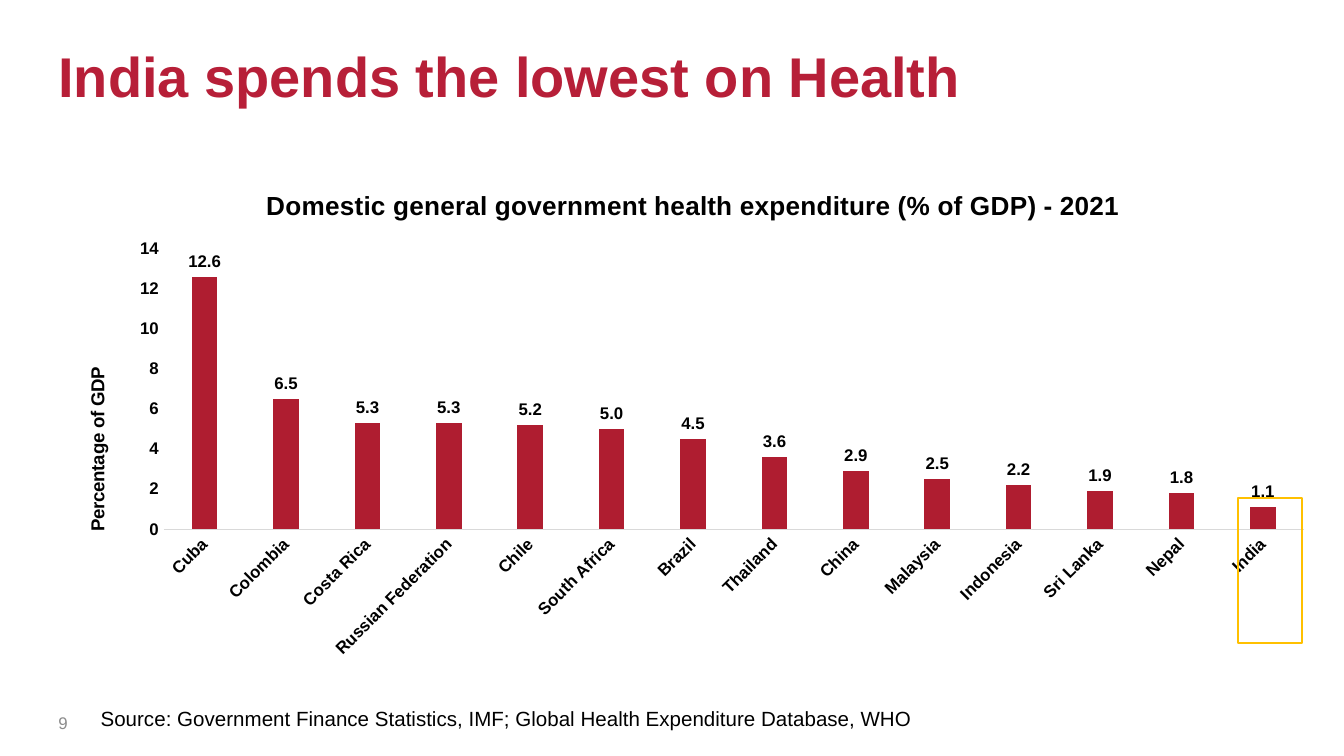
from dataclasses import dataclass

from pptx import Presentation
from pptx import util as u
from pptx.chart.data import CategoryChartData
from pptx.dml.color import RGBColor
from pptx.enum import chart as charts, shapes, text
from pptx.oxml import parse_xml
from pptx.oxml.ns import nsdecls, qn

PX = 4572  # 200 px to the inch


@dataclass(frozen=True)
class Theme:
    font: str = "Arial"
    heading: str = "B71F38"
    bar: str = "AF1D30"
    ink: str = "000000"
    muted: str = "8C8C8C"
    baseline: str = "D9D9D9"
    highlight: str = "FFC000"
    heading_size: int = 30
    chart_title_size: int = 14
    source_size: int = 11
    axis_title_size: int = 10
    label_size: int = 9


THEME = Theme()

SPENDING = {
    "Cuba": 12.6, "Colombia": 6.5, "Costa Rica": 5.3, "Russian Federation": 5.3,
    "Chile": 5.2, "South Africa": 5.0, "Brazil": 4.5, "Thailand": 3.6,
    "China": 2.9, "Malaysia": 2.5, "Indonesia": 2.2, "Sri Lanka": 1.9,
    "Nepal": 1.8, "India": 1.1,
}


def emu(box):
    return [u.Emu(length * PX) for length in box]


def style(font, size, color=THEME.ink, bold=False):
    font.name = THEME.font
    font.size = u.Pt(size)
    font.bold = bold
    font.color.rgb = RGBColor.from_string(color)


def add_line_of_text(slide, box, words, size, color, bold=False, side_inset=0):
    frame = slide.shapes.add_textbox(*emu(box)).text_frame
    frame.word_wrap = True
    frame.margin_left = frame.margin_right = u.Emu(side_inset * PX)
    frame.vertical_anchor = text.MSO_ANCHOR.MIDDLE
    run = frame.paragraphs[0].add_run()
    run.text = words
    style(run.font, size, color, bold)
    return frame


def add_heading(slide, box):
    frame = add_line_of_text(slide, box, "India spends the lowest on Health",
                             THEME.heading_size, THEME.heading, bold=True)
    frame.paragraphs[0].line_spacing = 0.9


def add_footer(slide, box):
    left, top, width, height = box
    add_line_of_text(slide, (left, top + 3, 86, height), "9",
                     THEME.label_size, THEME.muted)
    source = add_line_of_text(
        slide, (left + 43, top, width - 43, height - 4),
        "Source: Government Finance Statistics, IMF; "
        "Global Health Expenditure Database, WHO",
        THEME.source_size, THEME.ink, side_inset=20)
    source.vertical_anchor = text.MSO_ANCHOR.TOP
    source.auto_size = text.MSO_AUTO_SIZE.SHAPE_TO_FIT_TEXT


def place(part, index, chart_box, left, top, size=None):
    """Fix a chart part at px offsets inside the chart; size is (width, height)."""
    chart_width, chart_height = chart_box[2:]
    settings = [("xMode", "edge"), ("yMode", "edge"),
                ("x", left / chart_width), ("y", top / chart_height)]
    if size:
        settings.insert(0, ("layoutTarget", "inner"))
        settings += [("w", size[0] / chart_width), ("h", size[1] / chart_height)]
    children = "".join(f'<c:{tag} val="{value}"/>' for tag, value in settings)
    old = part.find(qn("c:layout"))
    if old is not None:
        part.remove(old)
    part.insert(index, parse_xml(
        f'<c:layout {nsdecls("c")}><c:manualLayout>{children}'
        "</c:manualLayout></c:layout>"))


def add_title(title, words, size):
    run = title.text_frame.paragraphs[0].add_run()
    run.text = words
    style(run.font, size, bold=True)


def format_axes(chart):
    countries, share = chart.category_axis, chart.value_axis
    for axis in (countries, share):
        axis.has_major_gridlines = False
        axis.major_tick_mark = axis.minor_tick_mark = charts.XL_TICK_MARK.NONE
        style(axis.tick_labels.font, THEME.label_size, bold=True)
    countries.format.line.color.rgb = RGBColor.from_string(THEME.baseline)
    countries.format.line.width = u.Pt(0.75)
    label_body = countries._element.find(qn("c:txPr")).find(qn("a:bodyPr"))
    label_body.set("rot", str(-45 * 60000))
    label_body.set("vert", "horz")

    share.format.line.fill.background()
    share.minimum_scale, share.maximum_scale, share.major_unit = 0, 14, 2
    share.tick_labels.number_format = "0"
    share.tick_labels.number_format_is_linked = False
    add_title(share.axis_title, "Percentage of GDP", THEME.axis_title_size)
    axis_body = share.axis_title.text_frame._txBody.find(qn("a:bodyPr"))
    axis_body.set("rot", str(-90 * 60000))
    axis_body.set("vert", "horz")


def format_bars(plot):
    plot.gap_width, plot.overlap = 219, -27
    plot.vary_by_categories = False
    bars = plot.series[0]
    bars.invert_if_negative = False
    bars.format.fill.solid()
    bars.format.fill.fore_color.rgb = RGBColor.from_string(THEME.bar)
    labels = bars.data_labels
    labels.show_value = True
    labels.number_format = "0.0"
    labels.number_format_is_linked = False
    labels.position = charts.XL_LABEL_POSITION.OUTSIDE_END
    style(labels.font, THEME.label_size, bold=True)


def add_spending_chart(slide, box):
    spending = CategoryChartData(number_format="0.0")
    spending.categories = SPENDING.keys()
    spending.add_series("Series 1", SPENDING.values())
    chart = slide.shapes.add_chart(
        charts.XL_CHART_TYPE.COLUMN_CLUSTERED, *emu(box), spending).chart
    style(chart.font, THEME.axis_title_size, bold=True)
    chart.has_legend = False
    chart.has_title = True
    add_title(chart.chart_title,
              "Domestic general government health expenditure (% of GDP) - 2021",
              THEME.chart_title_size)
    format_axes(chart)
    format_bars(chart.plots[0])
    place(chart.chart_title._element, 1, box, 301, 26)
    place(chart.value_axis.axis_title._element, 1, box, 34, 293)
    place(chart._chartSpace.chart.plotArea, 0, box, 156, 122, (1696, 418))


def add_highlight(slide, box):
    frame = slide.shapes.add_shape(shapes.MSO_SHAPE.RECTANGLE, *emu(box))
    frame.shadow.inherit = False
    frame.fill.background()
    frame.line.color.rgb = RGBColor.from_string(THEME.highlight)
    frame.line.width = u.Pt(1)


def main():
    deck = Presentation()
    deck.slide_width, deck.slide_height = emu((2000, 1125))
    slide = deck.slides.add_slide(deck.slide_layouts[6])
    add_heading(slide, (87, 20, 1890, 196))
    add_spending_chart(slide, (88, 248, 1890, 748))
    add_highlight(slide, (1842, 741, 96, 216))
    add_footer(slide, (87, 1041, 1350, 62))
    deck.save("out.pptx")


if __name__ == "__main__":
    main()
